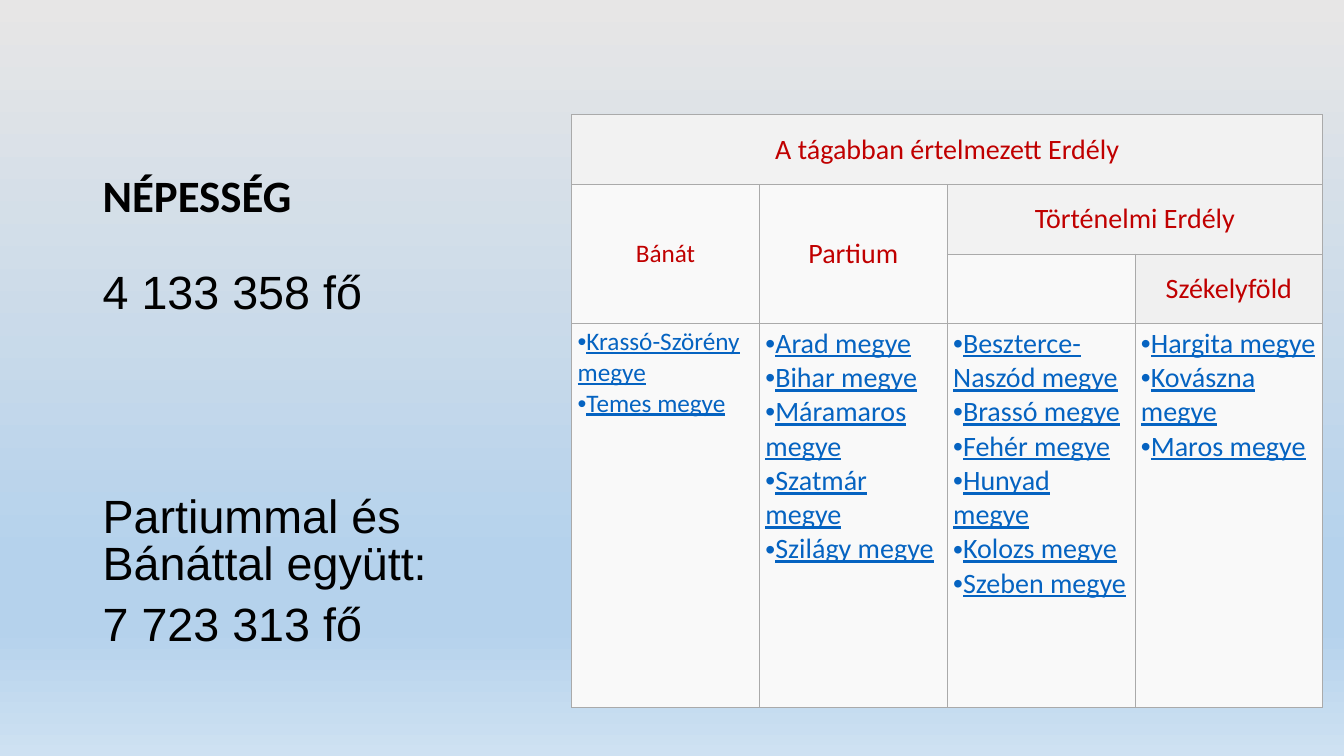
from lxml import etree
from pptx import Presentation, util as u
from pptx.dml.color import RGBColor
from pptx.enum import text
from pptx.oxml import ns

theme = {
    "sky": [(0, "E7E6E6"), (74, "B5D2EC"), (83, "B5D2EC"), (100, "CEE1F2")],
    "ink": "000000", "head": "C00000", "link": "0563C1", "edge": "AAAAAA",
    "pale": "F9F9F9", "band": "F2F2F2", "deep": "F0F0F0",
    "title": 32, "body": 33.3, "cell": 20, "small": 18,
    "sans": "Calibri", "plain": "Arial",
}


def node(up, tag, **attrs):
    """Append a DrawingML child element and return it."""
    return etree.SubElement(up, ns.qn("a:" + tag), attrs)


def write(para, words, size, tone, face=theme["sans"]):
    """Add one styled run to a paragraph and return its font."""
    run = para.add_run()
    run.text = words
    font = run.font
    font.size, font.name = u.Pt(size), face
    font.color.rgb = RGBColor.from_string(theme[tone])
    return font


deck = Presentation()
deck.slide_width, deck.slide_height = u.Inches(13.33), u.Inches(7.5)
slide = deck.slides.add_slide(deck.slide_layouts[6])

# Background
fill = slide.background.fill
fill.gradient()
fill.gradient_angle = 270
stops = slide.background._cSld.find(".//" + ns.qn("a:gsLst"))
for stop in list(stops):
    stops.remove(stop)
for share, tone in theme["sky"]:
    node(node(stops, "gs", pos=str(share * 1000)), "srgbClr", val=tone)

# Population text
left, wide = u.Inches(0.92), u.Inches(4.3)
title = slide.shapes.add_textbox(left, u.Inches(0.5), wide, u.Inches(1.75)).text_frame
title.word_wrap = True
title.vertical_anchor = text.MSO_ANCHOR.BOTTOM
para = title.paragraphs[0]
para.line_spacing = 0.9
write(para, "NÉPESSÉG", theme["title"], "ink").bold = True

body = slide.shapes.add_textbox(left, u.Inches(2.65), wide, u.Inches(3.77)).text_frame
body.word_wrap = True
facts = [("4 133 358 fő", 0), ("Partiummal és Bánáttal együtt:", 126), ("7 723 313 fő", 10)]
for i, (words, gap) in enumerate(facts):
    para = body.add_paragraph() if i else body.paragraphs[0]
    para.line_spacing, para.space_before = 0.84, u.Pt(gap)
    write(para, words, theme["body"], "ink", theme["plain"])

# Region table
rows, cols = 4, 4
table = slide.shapes.add_table(rows, cols, u.Inches(5.67), u.Inches(1.14),
                               u.Inches(7.45), u.Inches(5.88)).table
table.first_row = table.horz_banding = False
for row, high in zip(table.rows, [0.69] * 3 + [3.81]):
    row.height = u.Inches(high)

for cell in table.iter_cells():
    cell.margin_left = cell.margin_right = u.Inches(0.06)
    cell.margin_top = cell.margin_bottom = u.Inches(0.03)
    cell.fill.solid()
    cell.fill.fore_color.rgb = RGBColor.from_string(theme["pale"])
    props = cell._tc.get_or_add_tcPr()
    for i, side in enumerate("LRTB"):
        line = node(props, "ln" + side, w=str(u.Pt(0.75)))
        node(node(line, "solidFill"), "srgbClr", val=theme["edge"])
        props.insert(i, line)

# Row, column, row span, column span, words, size, fill
heads = [
    (0, 0, 1, 4, "A tágabban értelmezett Erdély", "cell", "band"),
    (1, 0, 2, 1, "Bánát", "small", "pale"),
    (1, 1, 2, 1, "Partium", "cell", "pale"),
    (1, 2, 1, 2, "Történelmi Erdély", "cell", "band"),
    (2, 3, 1, 1, "Székelyföld", "cell", "deep"),
]
for r, c, down, across, words, size, tone in heads:
    cell = table.cell(r, c)
    if down * across > 1:
        cell.merge(table.cell(r + down - 1, c + across - 1))
    cell.fill.fore_color.rgb = RGBColor.from_string(theme[tone])
    cell.vertical_anchor = text.MSO_ANCHOR.MIDDLE
    para = cell.text_frame.paragraphs[0]
    para.alignment = text.PP_ALIGN.CENTER
    write(para, words, theme[size], "head")

lists = [
    ("small", ["Krassó-Szörény", "Temes"]),
    ("cell", ["Arad", "Bihar", "Máramaros", "Szatmár", "Szilágy"]),
    ("cell", ["Beszterce-Naszód", "Brassó", "Fehér", "Hunyad", "Kolozs", "Szeben"]),
    ("cell", ["Hargita", "Kovászna", "Maros"]),
]
for c, (size, names) in enumerate(lists):
    frame = table.cell(rows - 1, c).text_frame
    for i, name in enumerate(names):
        para = frame.add_paragraph() if i else frame.paragraphs[0]
        props = para._p.get_or_add_pPr()
        props.set("marL", "0")
        props.set("indent", "0")
        node(props, "buFont", typeface=theme["plain"])
        node(props, "buChar", char="•")
        write(para, name + " megye", theme[size], "link").underline = True

deck.save("out.pptx")
